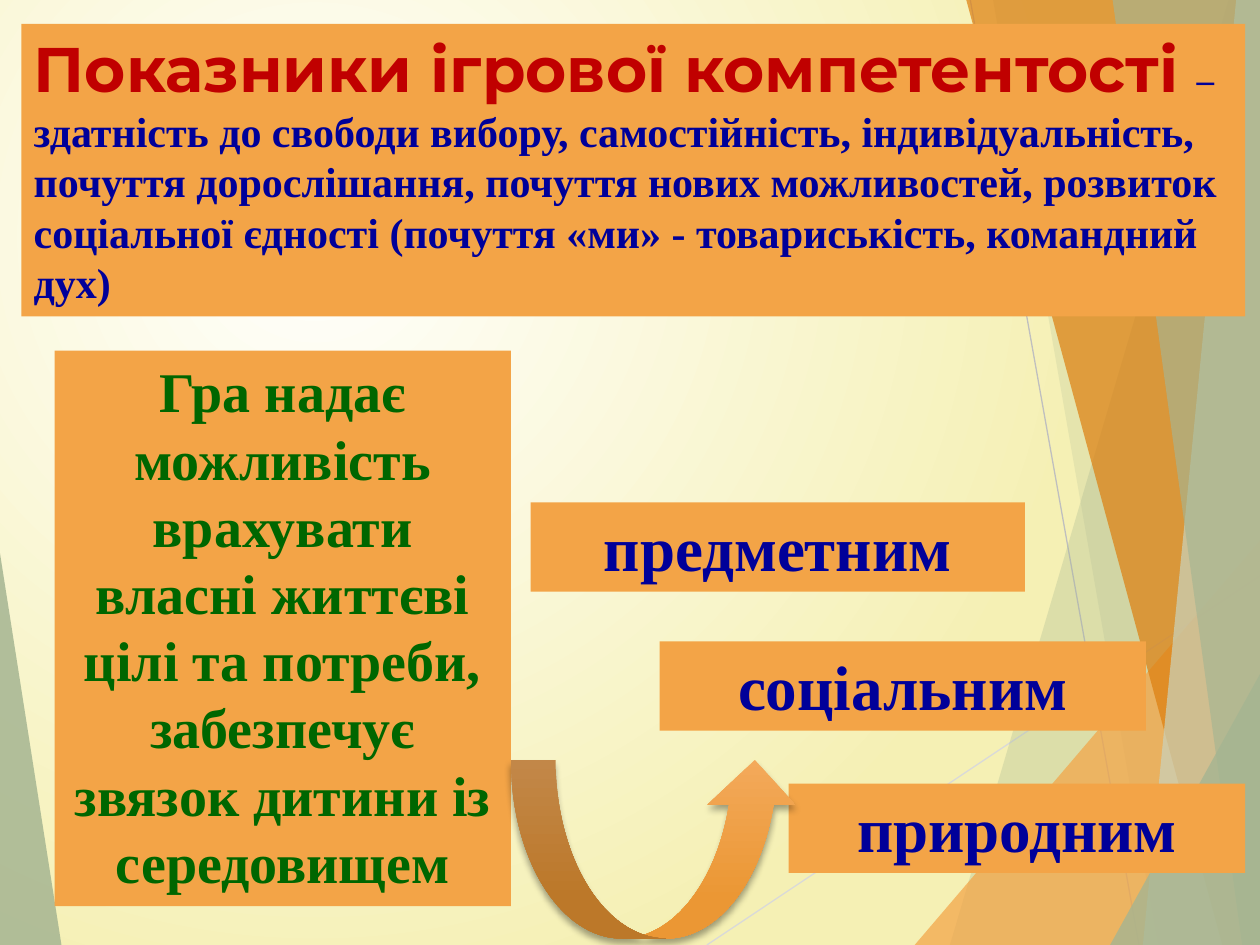
from lxml.etree import SubElement
from pptx import Presentation
from pptx.dml.color import RGBColor
from pptx.enum.shapes import MSO_CONNECTOR, MSO_SHAPE
from pptx.enum.text import MSO_ANCHOR, MSO_AUTO_SIZE, PP_ALIGN
from pptx.oxml import parse_xml
from pptx.oxml.ns import nsdecls, qn
from pptx.util import Cm, Pt

W, H = 25.4, 19.05
THEME = {
    "sage": "A5B592", "pale": "C9D3BE", "orange": "F3A447", "amber": "DD7E0E",
    "light": "D9D9D9", "grey": "BFBFBF",
    "blue": "000099", "red": "C00000", "green": "006600",
    "bg": ("FFFFFD", "F5F0B4"), "arrow": ("F3A95A", "EB9734"),
    "serif": "Times New Roman", "sans": "Montserrat",
    "heading": 36, "large": 32, "body": 24, "dash": 20,
}

LEFT_BAND = (0, 11.15, 1.24, 0, "sage", 85)
LINES = [
    (14.25, H, W, 11.61, "light"),
    (19.56, 0, 22.96, H, "grey"),
]
RIGHT_BANDS = [
    (24.77, 0, 19.15, W, "sage", 30),
    (20.02, 0, 23.34, W, "sage", 20),
    (W, 10.9, 18.44, W, "orange", 72),
    (19.48, 0, 24.64, W, "amber", 70),
    (24.92, 0, 23.04, W, "pale", 70),
    (22.43, 0, 25.04, W, "sage", 65),
    (W, 13.59, 22.38, W, "sage", 80),
]
ENVIRONMENTS = [
    ("природним", 15.9, 15.8, 9.2),
    ("предметним", 10.7, 10.13, 9.96),
    ("соціальним", 13.3, 12.93, 9.8),
]
INDICATORS = [[
    ("Показники ігрової компетентості ", "heading", "sans", "red"),
    ("– ", "dash", "serif", "blue"),
    ("здатність до свободи вибору, самостійність, індивідуальність, почуття "
     "дорослішання, почуття нових можливостей, розвиток соціальної єдності "
     "(почуття «ми» - товариськість, командний дух)", "body", "serif", "blue"),
]]
GAME = [
    [("Гра надає можливість врахувати власні життєві цілі та потреби,",
      "large", "serif", "green")],
    [("забезпечує звязок дитини із середовищем", "large", "serif", "green")],
]


def rgb(name):
    return RGBColor.from_string(THEME[name])


def stops(colors, end):
    return "<a:gsLst>" + "".join(
        f'<a:gs pos="{pos}"><a:srgbClr val="{c}"/></a:gs>'
        for pos, c in zip((0, end), colors)) + "</a:gsLst>"


def add_background(s):
    s.background.fill.solid()
    solid = next(s.background._cSld.iter(qn("a:solidFill")))
    solid.getparent().replace(solid, parse_xml(
        f'<a:gradFill {nsdecls("a")} rotWithShape="1">{stops(THEME["bg"], 100000)}'
        '<a:path path="circle"><a:fillToRect l="50000" t="50000" r="100000" '
        'b="100000"/></a:path></a:gradFill>'))


def add_band(s, x, y, bottom, edge, color, alpha):
    fb = s.shapes.build_freeform(Cm(x), Cm(y))
    fb.add_line_segments([(Cm(a), Cm(b)) for a, b in
                          ((bottom, H), (edge, H), (edge, y))])
    sp = fb.convert_to_shape()
    sp.shadow.inherit = False
    sp.fill.solid()
    sp.fill.fore_color.rgb = rgb(color)
    sp.line.fill.background()
    clr = next(sp._element.spPr.iter(qn("a:srgbClr")))
    SubElement(clr, qn("a:alpha"), val=str(alpha * 1000))


def add_line(s, x1, y1, x2, y2, color):
    ln = s.shapes.add_connector(MSO_CONNECTOR.STRAIGHT, Cm(x1), Cm(y1), Cm(x2), Cm(y2))
    ln.line.color.rgb = rgb(color)
    ln.line.width = Pt(0.75)
    SubElement(ln._element.spPr, qn("a:effectLst"))


def add_box(s, paragraphs, x, y, w, h, align=PP_ALIGN.CENTER):
    sp = s.shapes.add_shape(MSO_SHAPE.RECTANGLE, Cm(x), Cm(y), Cm(w), Cm(h))
    sp.shadow.inherit = False
    sp.fill.solid()
    sp.fill.fore_color.rgb = rgb("orange")
    sp.line.fill.background()
    tf = sp.text_frame
    frame = {"word_wrap": True, "auto_size": MSO_AUTO_SIZE.SHAPE_TO_FIT_TEXT,
             "vertical_anchor": MSO_ANCHOR.TOP}
    for key, value in frame.items():
        setattr(tf, key, value)
    for i, runs in enumerate(paragraphs):
        p = tf.add_paragraph() if i else tf.paragraphs[0]
        p.alignment = align
        for text, size, font, color in runs:
            r = p.add_run()
            r.text = text
            fmt = {"size": Pt(THEME[size]), "name": THEME[font], "bold": True}
            for key, value in fmt.items():
                setattr(r.font, key, value)
            r.font.color.rgb = rgb(color)


def add_arrow(s, x, y, w, h):
    sp = s.shapes.add_shape(MSO_SHAPE.CURVED_UP_ARROW, Cm(x), Cm(y), Cm(w), Cm(h))
    for i, value in enumerate((0.25, 0.49, 0.25)):
        sp.adjustments[i] = value
    sp.fill.solid()
    sp.line.fill.background()
    spPr = sp._element.spPr
    spPr.replace(spPr.find(qn("a:solidFill")), parse_xml(
        f'<a:gradFill {nsdecls("a")} rotWithShape="1">{stops(THEME["arrow"], 78000)}'
        '<a:lin ang="5400000" scaled="0"/></a:gradFill>'))
    spPr.append(parse_xml(
        f'<a:effectLst {nsdecls("a")}><a:outerShdw blurRad="{Pt(4)}" dist="{Pt(3)}" '
        'dir="5400000" rotWithShape="0"><a:srgbClr val="000000">'
        '<a:alpha val="35000"/></a:srgbClr></a:outerShdw></a:effectLst>'))


def main():
    prs = Presentation()
    prs.slide_width, prs.slide_height = Cm(W), Cm(H)
    s = prs.slides.add_slide(prs.slide_layouts[6])
    add_background(s)
    add_band(s, *LEFT_BAND)
    for line in LINES:
        add_line(s, *line)
    for band in RIGHT_BANDS:
        add_band(s, *band)
    for word, x, y, w in ENVIRONMENTS:
        add_box(s, [[(word, "heading", "serif", "blue")]], x, y, w, 1.8)
    add_box(s, INDICATORS, 0.43, 0.48, 24.67, 5.9, PP_ALIGN.LEFT)
    add_box(s, GAME, 1.1, 7.07, 9.2, 11.2)
    add_arrow(s, 10.3, 15.32, 5.8, 3.6)
    prs.save("out.pptx")


if __name__ == "__main__":
    main()
